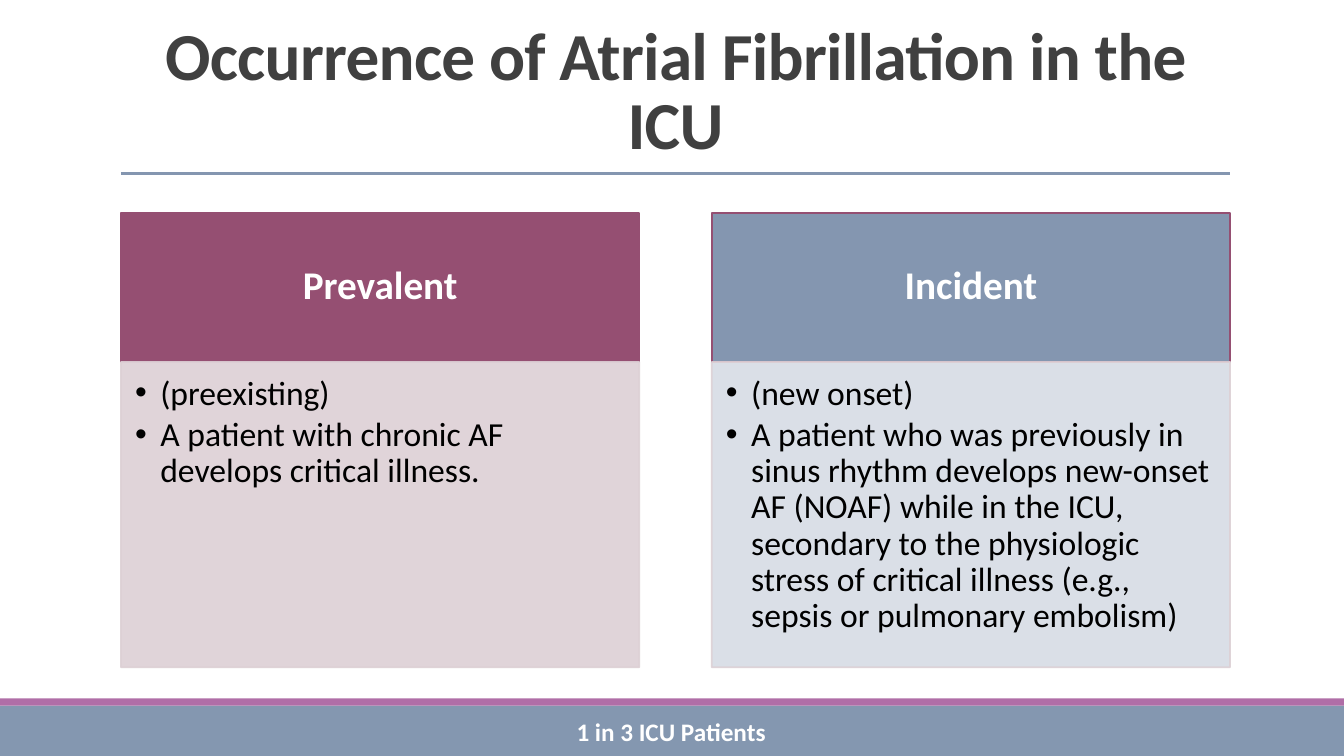
from lxml.etree import SubElement
from pptx import Presentation
from pptx.dml.color import RGBColor
from pptx.enum.shapes import MSO_CONNECTOR, MSO_SHAPE
from pptx.enum.text import MSO_ANCHOR, MSO_AUTO_SIZE, PP_ALIGN
from pptx.oxml.ns import qn
from pptx.util import Inches, Pt

PLUM = RGBColor(0x95, 0x4F, 0x72)
ORCHID = RGBColor(0xB0, 0x6E, 0xA7)
SLATE = RGBColor(0x84, 0x96, 0xB0)
FOOTER_SLATE = RGBColor(0x84, 0x97, 0xB0)
PALE_PLUM = RGBColor(0xDD, 0xD0, 0xD5)
PALE_SLATE = RGBColor(0xD6, 0xDC, 0xE5)
CHARCOAL = RGBColor(0x40, 0x40, 0x40)
WHITE = RGBColor(0xFF, 0xFF, 0xFF)
BLACK = RGBColor(0x00, 0x00, 0x00)

LEFT = 1.2
COLUMN_STEP = 5.86
COLUMN_WIDTH = 5.14
HEADING_TOP, HEADING_HEIGHT = 2.11, 1.48
PANEL_TOP, PANEL_HEIGHT = 3.59, 3.03


def place(box, position, margins, anchor, fill=None, outline=None):
    box.left, box.top, box.width, box.height = [Inches(value) for value in position]
    sides = ("margin_left", "margin_top", "margin_right", "margin_bottom")
    frame_format = dict(zip(sides, [Inches(value) for value in margins]))
    frame_format.update(word_wrap=True, auto_size=MSO_AUTO_SIZE.NONE, vertical_anchor=anchor)
    for name, value in frame_format.items():
        setattr(box.text_frame, name, value)
    if fill is not None:
        box.fill.solid()
        box.fill.fore_color.rgb = fill
        box.line.color.rgb = outline
        box.line.width = Pt(1.25)


def write(para, text, size, color, bold, **para_format):
    span = para.add_run()
    span.text = text
    for name, value in {"name": "Calibri", "size": Pt(size), "bold": bold}.items():
        setattr(span.font, name, value)
    span.font.color.rgb = color
    for name, value in {"space_before": Pt(0), **para_format}.items():
        setattr(para, name, value)
    return span


deck = Presentation()
deck.slide_width = Inches(13.33)
deck.slide_height = Inches(7.5)
page = deck.slides.add_slide(deck.slide_layouts.get_by_name("Comparison"))
holders = {holder.placeholder_format.idx: holder for holder in page.placeholders}

for top, height, color in [(7, 0.5, FOOTER_SLATE), (6.93, 0.07, ORCHID)]:
    bar = page.shapes.add_shape(
        MSO_SHAPE.RECTANGLE, 0, Inches(top), deck.slide_width, Inches(height)
    )
    bar.shadow.inherit = False
    bar.fill.solid()
    bar.fill.fore_color.rgb = color
    bar.line.fill.background()

rule = page.shapes.add_connector(
    MSO_CONNECTOR.STRAIGHT, Inches(LEFT), Inches(1.72), Inches(12.2), Inches(1.72)
)
rule.line.color.rgb = SLATE
rule.line.width = Pt(2.25)
SubElement(rule._element.spPr, qn("a:effectLst"))

title = page.shapes.title
place(title, (LEFT, 0.31, 11, 1.36), (0.1, 0.05, 0.1, 0.05), MSO_ANCHOR.BOTTOM)
title_span = write(
    title.text_frame.paragraphs[0], "Occurrence of Atrial Fibrillation in the ICU",
    48, CHARCOAL, True, alignment=PP_ALIGN.CENTER, line_spacing=0.85,
)
title_span.font._element.set("spc", "-50")

columns = [
    ("Prevalent", PLUM, PALE_PLUM, [
        "(preexisting)",
        "A patient with chronic AF develops critical illness.",
    ]),
    ("Incident", SLATE, PALE_SLATE, [
        "(new onset)",
        "A patient who was previously in sinus rhythm develops new-onset AF (NOAF) while "
        "in the ICU, secondary to the physiologic stress of critical illness "
        "(e.g., sepsis or pulmonary embolism)",
    ]),
]

for index, (name, heading_fill, panel_fill, points) in enumerate(columns):
    left = LEFT + index * COLUMN_STEP
    heading, panel = holders[2 * index + 1], holders[2 * index + 2]
    place(
        heading, (left, HEADING_TOP, COLUMN_WIDTH, HEADING_HEIGHT),
        (0.22, 0.12, 0.22, 0.12), MSO_ANCHOR.MIDDLE, heading_fill, PLUM,
    )
    write(
        heading.text_frame.paragraphs[0], name, 28, WHITE, True,
        alignment=PP_ALIGN.CENTER, line_spacing=0.9, space_after=Pt(9.8),
    )
    place(
        panel, (left, PANEL_TOP, COLUMN_WIDTH, PANEL_HEIGHT),
        (0.14, 0.14, 0.19, 0.21), MSO_ANCHOR.TOP, panel_fill, PALE_PLUM,
    )
    for color in panel._element.spPr.iter(qn("a:srgbClr")):
        SubElement(color, qn("a:alpha"), val="90000")
    for number, point in enumerate(points):
        frame = panel.text_frame
        para = frame.add_paragraph() if number else frame.paragraphs[0]
        properties = para._p.get_or_add_pPr()
        properties.set("marL", str(Inches(0.25)))
        properties.set("indent", str(Inches(-0.25)))
        SubElement(properties, qn("a:buFont"), typeface="Arial")
        SubElement(properties, qn("a:buChar"), char="•")
        write(
            para, point, 24, BLACK, False,
            alignment=PP_ALIGN.LEFT, line_spacing=0.9, space_after=Pt(3.6),
        )

footer = page.shapes.add_textbox(Inches(5.62), Inches(7.06), Inches(2.1), Inches(0.4))
footer.text_frame.word_wrap = False
footer.text_frame.auto_size = MSO_AUTO_SIZE.SHAPE_TO_FIT_TEXT
write(footer.text_frame.paragraphs[0], "1 in 3 ICU Patients", 18, WHITE, True)

deck.save("out.pptx")
